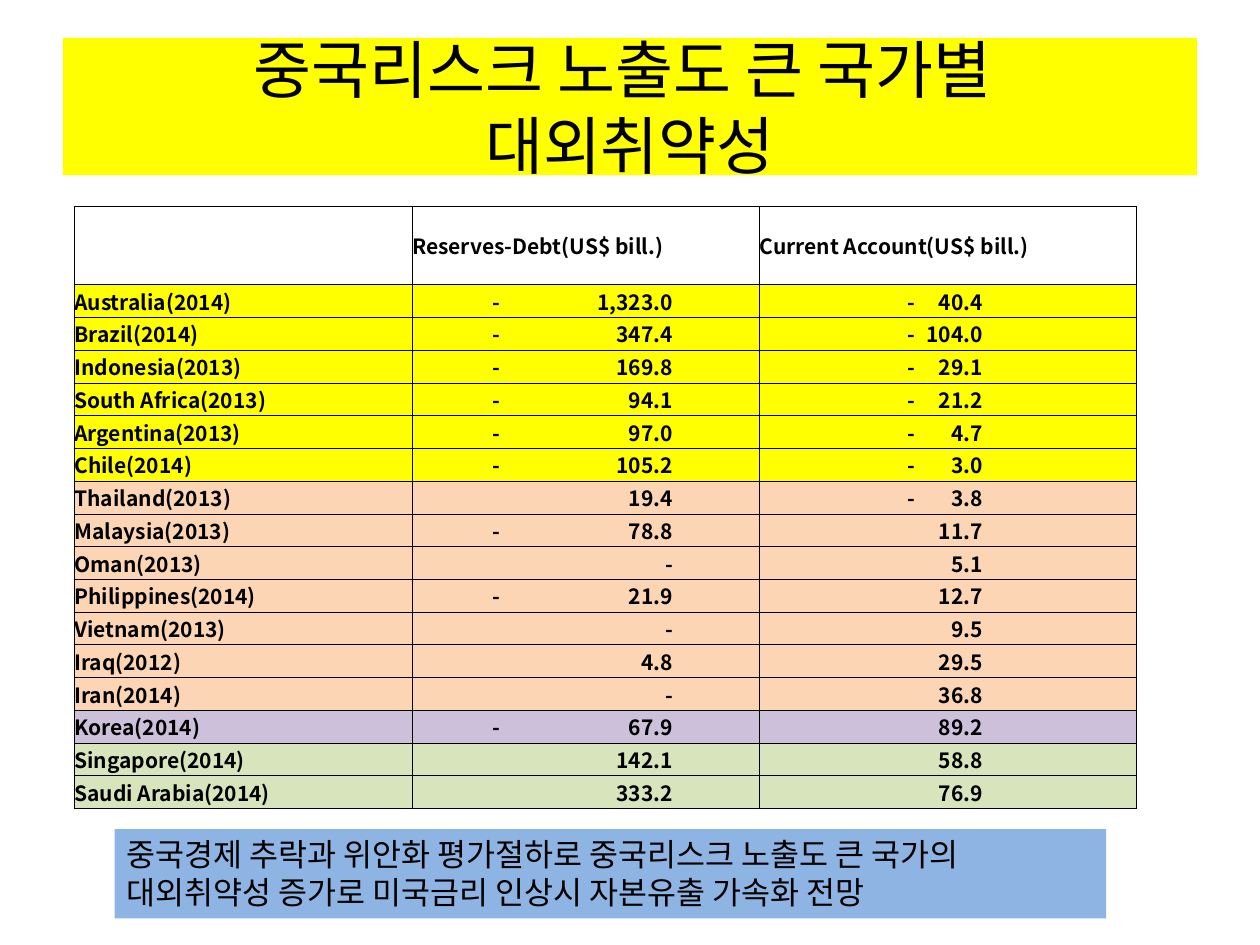
from dataclasses import dataclass

from lxml import etree
from pptx import Presentation
from pptx.dml.color import RGBColor
from pptx.enum.shapes import MSO_SHAPE
from pptx.enum.text import MSO_ANCHOR, PP_ALIGN
from pptx.oxml.ns import qn
from pptx.util import Inches, Pt

RECTANGLE = MSO_SHAPE.RECTANGLE
TOP, MIDDLE = MSO_ANCHOR.TOP, MSO_ANCHOR.MIDDLE
LEFT, CENTER = PP_ALIGN.LEFT, PP_ALIGN.CENTER


@dataclass(frozen=True)
class Theme:
    font: str = "Noto Sans CJK KR"
    ink: str = "000000"
    yellow: str = "FFFF00"
    peach: str = "FCD5B4"
    purple: str = "CCC0DA"
    green: str = "D7E4BC"
    blue: str = "8EB4E3"
    title_size: int = 36
    note_size: int = 18
    table_size: int = 12


theme = Theme()


def style_text(para, size, bold=False):
    for span in para.runs:
        span.font.name = theme.font
        span.font.size = Pt(size)
        span.font.bold = bold
        span.font.color.rgb = RGBColor.from_string(theme.ink)
        etree.SubElement(span.font._element, qn("a:ea"), typeface=theme.font)


def add_banner(page, place, fill, text, size, align, anchor):
    box = page.shapes.add_shape(RECTANGLE, *(Inches(value) for value in place))
    box.shadow.inherit = False
    box.fill.solid()
    box.fill.fore_color.rgb = RGBColor.from_string(fill)
    box.line.fill.background()
    frame = box.text_frame
    frame.word_wrap = True
    frame.vertical_anchor = anchor
    frame.text = text
    para = frame.paragraphs[0]
    para.alignment = align
    para.line_spacing = Pt(size * 1.2)
    style_text(para, size)


deck = Presentation()
deck.slide_width, deck.slide_height = Inches(10), Inches(7.5)
page = deck.slides.add_slide(deck.slide_layouts[6])

add_banner(page, (0.5, 0.3, 9, 1.09), theme.yellow,
           "중국리스크 노출도 큰 국가별 \v대외취약성", theme.title_size, CENTER, MIDDLE)

header = ("", "Reserves-Debt(US$ bill.)", "Current Account(US$ bill.)")
groups = [
    (theme.yellow, [
        ("Australia(2014)", "-\t1,323.0", "-\t40.4"),
        ("Brazil(2014)", "-\t347.4", "-\t104.0"),
        ("Indonesia(2013)", "-\t169.8", "-\t29.1"),
        ("South Africa(2013)", "-\t94.1", "-\t21.2"),
        ("Argentina(2013)", "-\t97.0", "-\t4.7"),
        ("Chile(2014)", "-\t105.2", "-\t3.0"),
    ]),
    (theme.peach, [
        ("Thailand(2013)", "\t19.4", "-\t3.8"),
        ("Malaysia(2013)", "-\t78.8", "\t11.7"),
        ("Oman(2013)", "\t-", "\t5.1"),
        ("Philippines(2014)", "-\t21.9", "\t12.7"),
        ("Vietnam(2013)", "\t-", "\t9.5"),
        ("Iraq(2012)", "\t4.8", "\t29.5"),
        ("Iran(2014)", "\t-", "\t36.8"),
    ]),
    (theme.purple, [("Korea(2014)", "-\t67.9", "\t89.2")]),
    (theme.green, [
        ("Singapore(2014)", "\t142.1", "\t58.8"),
        ("Saudi Arabia(2014)", "\t333.2", "\t76.9"),
    ]),
]
rows = [(None, header)] + [(fill, row) for fill, group in groups for row in group]
column_widths = (2.68, 2.76, 2.99)
sign_indents = (0, 0.64, 1.17)
number_tabs = (0, 1.43, 0.6)
header_height, row_height = 0.62, 0.26

table = page.shapes.add_table(
    len(rows), len(header), Inches(0.59), Inches(1.64), Inches(sum(column_widths)),
    Inches(header_height + row_height * (len(rows) - 1))).table
for column, width in zip(table.columns, column_widths):
    column.width = Inches(width)

for row_index, (fill, texts) in enumerate(rows):
    table.rows[row_index].height = Inches(row_height if row_index else header_height)
    for column_index, text in enumerate(texts):
        cell = table.cell(row_index, column_index)
        cell.margin_left = cell.margin_right = cell.margin_top = cell.margin_bottom = 0
        cell.vertical_anchor = MIDDLE
        cell.text_frame.text = text
        para = cell.text_frame.paragraphs[0]
        style_text(para, theme.table_size, bold=True)
        if "\t" in text:
            cell.margin_left = Inches(sign_indents[column_index])
            tabs = etree.SubElement(para._p.get_or_add_pPr(), qn("a:tabLst"))
            etree.SubElement(tabs, qn("a:tab"), algn="r",
                             pos=str(Inches(number_tabs[column_index])))
        properties = cell._tc.get_or_add_tcPr()
        for side in ("a:lnL", "a:lnR", "a:lnT", "a:lnB"):
            border = etree.SubElement(properties, qn(side), w=str(Pt(0.5)))
            paint = etree.SubElement(border, qn("a:solidFill"))
            etree.SubElement(paint, qn("a:srgbClr"), val=theme.ink)
        if fill:
            cell.fill.solid()
            cell.fill.fore_color.rgb = RGBColor.from_string(fill)
        else:
            cell.fill.background()

add_banner(page, (0.91, 6.58, 7.87, 0.71), theme.blue,
           "중국경제 추락과 위안화 평가절하로 중국리스크 노출도 큰 국가의 "
           "대외취약성 증가로 미국금리 인상시 자본유출 가속화 전망",
           theme.note_size, LEFT, TOP)

deck.save("out.pptx")
